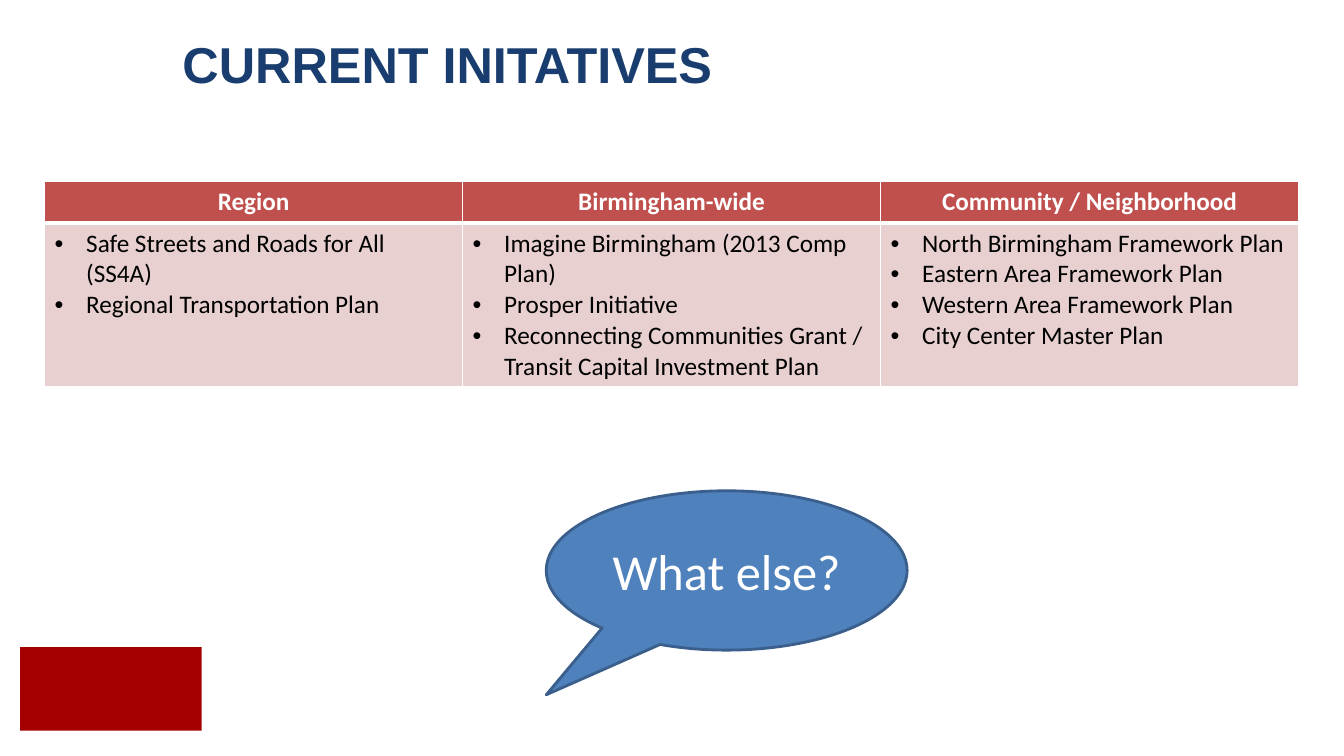
from dataclasses import dataclass

import lxml.etree
import pptx
import pptx.dml.color
import pptx.enum.shapes
import pptx.enum.text
import pptx.oxml.ns
import pptx.util

Pt = pptx.util.Pt
qn = pptx.oxml.ns.qn
ALIGN = pptx.enum.text.PP_ALIGN
MIDDLE = pptx.enum.text.MSO_ANCHOR.MIDDLE
SHAPES = pptx.enum.shapes.MSO_SHAPE

WHITE = "FFFFFF"
BULLET_INDENT = 22.5
COLUMN_WIDTH = 298.6
HEADER_HEIGHT, PLANS_HEIGHT = 29.5, 115.2


@dataclass(frozen=True)
class Scope:
    heading: str
    plans: tuple[str, ...]


@dataclass(frozen=True)
class Box:
    left: float
    top: float
    width: float
    height: float

    def lengths(self) -> tuple:
        return Pt(self.left), Pt(self.top), Pt(self.width), Pt(self.height)


SCOPES = (
    Scope("Region", (
        "Safe Streets and Roads for All (SS4A)",
        "Regional Transportation Plan",
    )),
    Scope("Birmingham-wide", (
        "Imagine Birmingham (2013 Comp Plan)",
        "Prosper Initiative",
        "Reconnecting Communities Grant / Transit Capital Investment Plan",
    )),
    Scope("Community / Neighborhood", (
        "North Birmingham Framework Plan",
        "Eastern Area Framework Plan",
        "Western Area Framework Plan",
        "City Center Master Plan",
    )),
)


def rgb(value: str) -> pptx.dml.color.RGBColor:
    return pptx.dml.color.RGBColor.from_string(value)


def paint(target, color: str) -> None:
    target.fill.solid()
    target.fill.fore_color.rgb = rgb(color)


def write(paragraph, text: str, size: float, color: str, bold: bool = False,
          font: str = "Calibri", align=ALIGN.LEFT) -> None:
    paragraph.alignment = align
    run = paragraph.add_run()
    run.text = text
    run.font.name = font
    run.font.size = Pt(size)
    run.font.bold = bold
    run.font.color.rgb = rgb(color)


def add_bullet(paragraph) -> None:
    properties = paragraph._p.get_or_add_pPr()
    properties.set("marL", str(Pt(BULLET_INDENT)))
    properties.set("indent", str(-Pt(BULLET_INDENT)))
    lxml.etree.SubElement(properties, qn("a:buFont"), typeface="Arial")
    lxml.etree.SubElement(properties, qn("a:buChar"), char="•")


def add_borders(cell, top: float, bottom: float) -> None:
    properties = cell._tc.get_or_add_tcPr()
    widths = {"lnL": 1, "lnR": 1, "lnT": top, "lnB": bottom}
    for index, (edge, width) in enumerate(widths.items()):
        line = lxml.etree.Element(qn(f"a:{edge}"), w=str(Pt(width)))
        fill = lxml.etree.SubElement(line, qn("a:solidFill"))
        lxml.etree.SubElement(fill, qn("a:srgbClr"), val=WHITE)
        properties.insert(index, line)


def add_shape(slide, kind, box: Box, color: str):
    shape = slide.shapes.add_shape(kind, *box.lengths())
    shape.shadow.inherit = False
    paint(shape, color)
    shape.line.fill.background()
    return shape


def add_title(slide) -> None:
    title = slide.shapes.title
    title.left, title.top, title.width, title.height = Box(123.1, 18, 751.7, 54).lengths()
    title.text_frame.vertical_anchor = MIDDLE
    write(title.text_frame.paragraphs[0], "CURRENT INITATIVES", 36, "183D6E",
          bold=True, font="Arial")


def add_initiatives(slide) -> None:
    box = Box(31.9, 129.8, COLUMN_WIDTH * len(SCOPES), HEADER_HEIGHT + PLANS_HEIGHT)
    table = slide.shapes.add_table(2, len(SCOPES), *box.lengths()).table
    table.first_row = False
    table.horz_banding = False
    table.rows[0].height = Pt(HEADER_HEIGHT)
    table.rows[1].height = Pt(PLANS_HEIGHT)
    for column, scope in enumerate(SCOPES):
        table.columns[column].width = Pt(COLUMN_WIDTH)
        header, body = table.cell(0, column), table.cell(1, column)
        paint(header, "C0504D")
        paint(body, "E8D0D0")
        add_borders(header, top=1, bottom=3)
        add_borders(body, top=3, bottom=1)
        write(header.text_frame.paragraphs[0], scope.heading, 18, WHITE,
              bold=True, align=ALIGN.CENTER)
        frame = body.text_frame
        for index, plan in enumerate(scope.plans):
            paragraph = frame.add_paragraph() if index else frame.paragraphs[0]
            add_bullet(paragraph)
            write(paragraph, plan, 18, "000000")


def add_question(slide) -> None:
    question = add_shape(slide, SHAPES.OVAL_CALLOUT, Box(390.2, 350.6, 257.8, 113.8), "4F81BD")
    question.line.color.rgb = rgb("3A5F8C")
    question.line.width = Pt(2)
    question.adjustments[0] = -0.5
    question.adjustments[1] = 0.78
    question.text_frame.vertical_anchor = MIDDLE
    write(question.text_frame.paragraphs[0], "What else?", 36, WHITE, align=ALIGN.CENTER)


def main() -> None:
    deck = pptx.Presentation()
    deck.slide_width, deck.slide_height = Pt(960), Pt(540)
    slide = deck.slides.add_slide(deck.slide_layouts.get_by_name("Title Only"))
    add_shape(slide, SHAPES.RECTANGLE, Box(14.4, 462.2, 129.6, 59.8), "A40000")
    add_title(slide)
    add_initiatives(slide)
    add_question(slide)
    deck.save("out.pptx")


if __name__ == "__main__":
    main()
